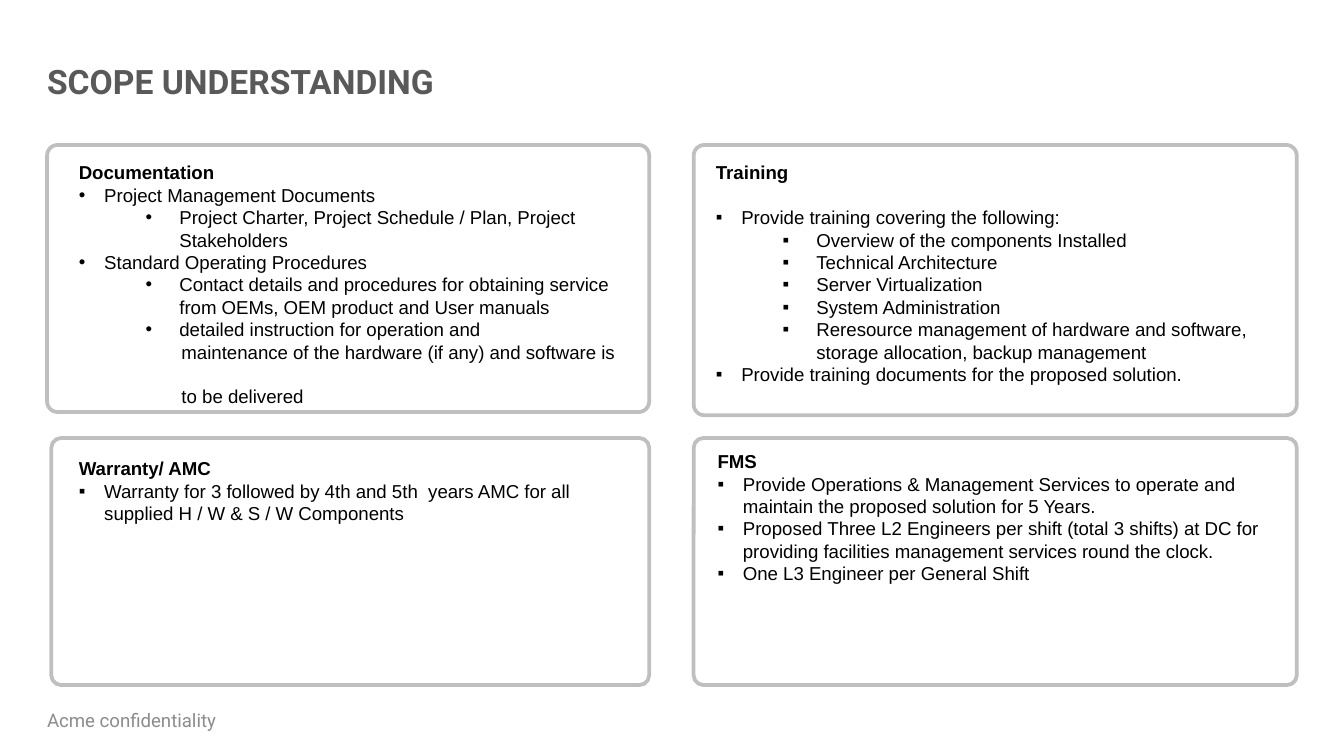
import lxml.etree
import pptx
import pptx.dml.color
import pptx.enum.shapes
import pptx.enum.text
import pptx.oxml.ns
import pptx.util
from pptx.util import Cm

BLACK = pptx.dml.color.RGBColor(0x00, 0x00, 0x00)
TITLE_GREY = pptx.dml.color.RGBColor(0x59, 0x59, 0x59)
FOOTER_GREY = pptx.dml.color.RGBColor(0x8C, 0x8C, 0x8C)
FRAME_GREY = pptx.dml.color.RGBColor(0xBF, 0xBF, 0xBF)

INDENTS = {
    "item": (0, 0.48, -0.48),
    "sub": (1, 1.9, -0.64),
    "more": (1, 1.94, 0),
}

PANELS = [
    {
        "frame": (0.89, 2.74, 11.38, 5.05),
        "text": (1.24, 2.92, 10.85, 4.52),
        "heading": "Documentation",
        "bullet": "•",
        "lines": [
            ("item", "Project Management Documents", 0),
            ("sub", "Project Charter, Project Schedule / Plan, Project Stakeholders", 0),
            ("item", "Standard Operating Procedures", 0),
            ("sub", "Contact details and procedures for obtaining service from OEMs, "
                    "OEM product and User manuals", 0),
            ("sub", "detailed instruction for operation and", 0),
            ("more", "maintenance of the hardware (if any) and software is", 0),
            ("more", "to be delivered", 12),
        ],
    },
    {
        "frame": (13.11, 2.74, 11.4, 5.11),
        "text": (13.28, 2.92, 11.3, 4.52),
        "heading": "Training",
        "bullet": "▪",
        "lines": [
            ("item", "Provide training covering the following:", 12),
            ("sub", "Overview of the components Installed", 0),
            ("sub", "Technical Architecture", 0),
            ("sub", "Server Virtualization", 0),
            ("sub", "System Administration", 0),
            ("sub", "Reresource management of hardware and software, storage allocation, "
                    "backup management", 0),
            ("item", "Provide training documents for the proposed solution.", 0),
        ],
    },
    {
        "frame": (0.97, 8.28, 11.3, 4.67),
        "text": (1.24, 8.51, 10.16, 1.55),
        "heading": "Warranty/ AMC",
        "bullet": "▪",
        "lines": [
            ("item", "Warranty for 3 followed by 4th and 5th  years AMC for all "
                     "supplied H / W & S / W Components", 0),
        ],
    },
    {
        "frame": (13.11, 8.28, 11.4, 4.67),
        "text": (13.31, 8.38, 11.07, 2.82),
        "heading": "FMS",
        "bullet": "▪",
        "lines": [
            ("item", "Provide Operations & Management Services to operate and maintain "
                     "the proposed solution for 5 Years.", 0),
            ("item", "Proposed Three L2 Engineers per shift (total 3 shifts) at DC for "
                     "providing facilities management services round the clock.", 0),
            ("item", "One L3 Engineer per General Shift", 0),
        ],
    },
]


def place(sp, box):
    sp.left, sp.top, sp.width, sp.height = (Cm(v) for v in box)


def set_frame(tf, anchor, left, right):
    tf.word_wrap = True
    tf.auto_size = pptx.enum.text.MSO_AUTO_SIZE.NONE
    tf.vertical_anchor = anchor
    tf.margin_left, tf.margin_right = Cm(left), Cm(right)
    tf.margin_top = tf.margin_bottom = Cm(0.13)


def add_run(p, text, font, size, color, bold=False):
    r = p.add_run()
    r.text = text
    r.font.name = font
    r.font.size = pptx.util.Pt(size)
    r.font.bold = bold
    r.font.color.rgb = color


def set_bullet(p, char, margin, indent):
    qn = pptx.oxml.ns.qn
    pPr = p._p.get_or_add_pPr()
    pPr.set("marL", str(int(Cm(margin))))
    pPr.set("indent", str(int(Cm(indent))))
    if char:
        lxml.etree.SubElement(pPr, qn("a:buFont"), typeface="Arial")
        lxml.etree.SubElement(pPr, qn("a:buChar"), char=char)
    else:
        lxml.etree.SubElement(pPr, qn("a:buNone"))


def add_line(p, text, char, layout, before=0, bold=False):
    level, margin, indent = layout
    p.level = level
    p.alignment = pptx.enum.text.PP_ALIGN.LEFT
    set_bullet(p, char, margin, indent)
    p.line_spacing = pptx.util.Pt(12)
    p.space_before = pptx.util.Pt(before)
    p.space_after = pptx.util.Pt(0)
    add_run(p, text, "Arial", 10, BLACK, bold)


def add_frame(s, box):
    sp = s.shapes.add_shape(
        pptx.enum.shapes.MSO_SHAPE.ROUNDED_RECTANGLE, *(Cm(v) for v in box))
    sp.adjustments[0] = 0.04
    sp.shadow.inherit = False
    sp.fill.background()
    sp.line.color.rgb = FRAME_GREY
    sp.line.width = pptx.util.Pt(2)


def fill_panel(sp, panel):
    place(sp, panel["text"])
    tf = sp.text_frame
    set_frame(tf, pptx.enum.text.MSO_ANCHOR.TOP, 0.25, 0.25)
    add_line(tf.paragraphs[0], panel["heading"], None, (0, 0, 0), bold=True)
    for kind, text, before in panel["lines"]:
        char = None if kind == "more" else panel["bullet"]
        add_line(tf.add_paragraph(), text, char, INDENTS[kind], before)


def fill_label(sp, box, text, size, color, bold=False):
    place(sp, box)
    tf = sp.text_frame
    set_frame(tf, pptx.enum.text.MSO_ANCHOR.MIDDLE, 0, 0)
    p = tf.paragraphs[0]
    p.alignment = pptx.enum.text.PP_ALIGN.LEFT
    add_run(p, text, "Roboto", size, color, bold)


def main():
    prs = pptx.Presentation()
    prs.slide_width, prs.slide_height = Cm(25.4), Cm(14.29)
    s = prs.slides.add_slide(prs.slide_layouts.get_by_name("Comparison"))
    title, *bodies = s.placeholders
    fill_label(title, (0.89, 1.02, 20.93, 1.02), "SCOPE UNDERSTANDING", 18, TITLE_GREY, True)
    for sp, panel in zip(bodies, PANELS):
        add_frame(s, panel["frame"])
        fill_panel(sp, panel)
    footer = s.shapes.add_textbox(0, 0, 0, 0)
    fill_label(footer, (0.89, 13.23, 4.01, 0.76), "Acme confidentiality", 10, FOOTER_GREY)
    prs.save("out.pptx")


if __name__ == "__main__":
    main()
